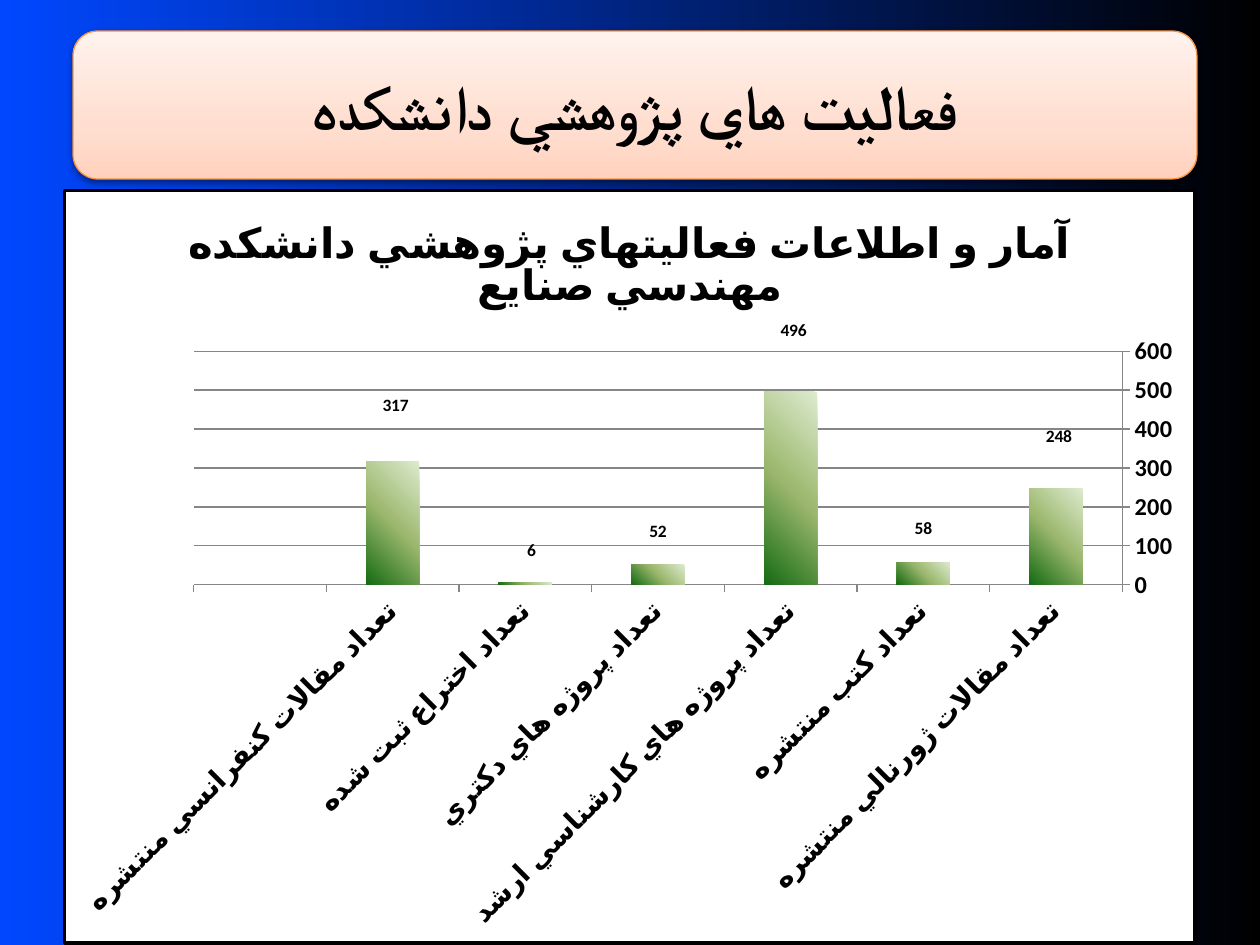
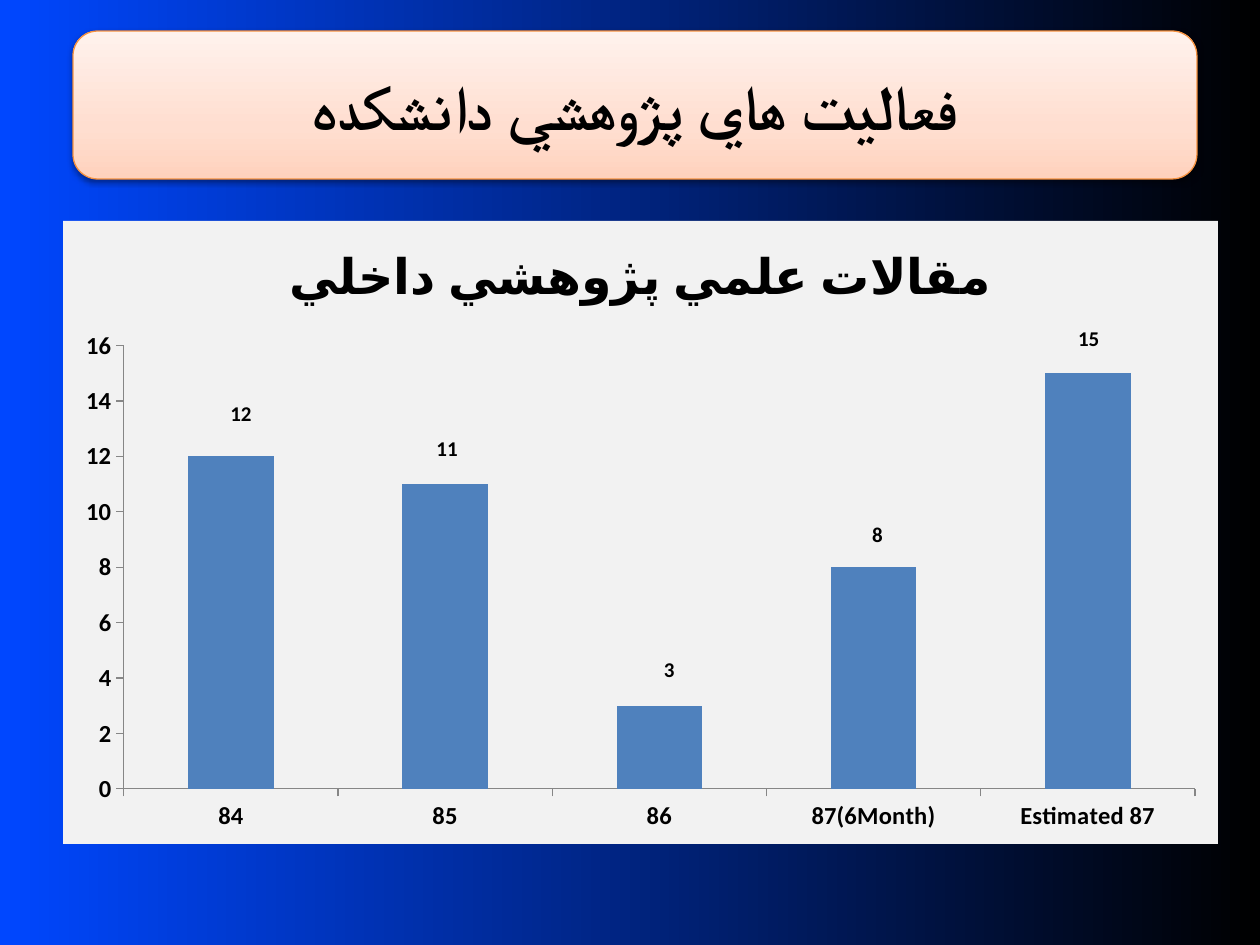
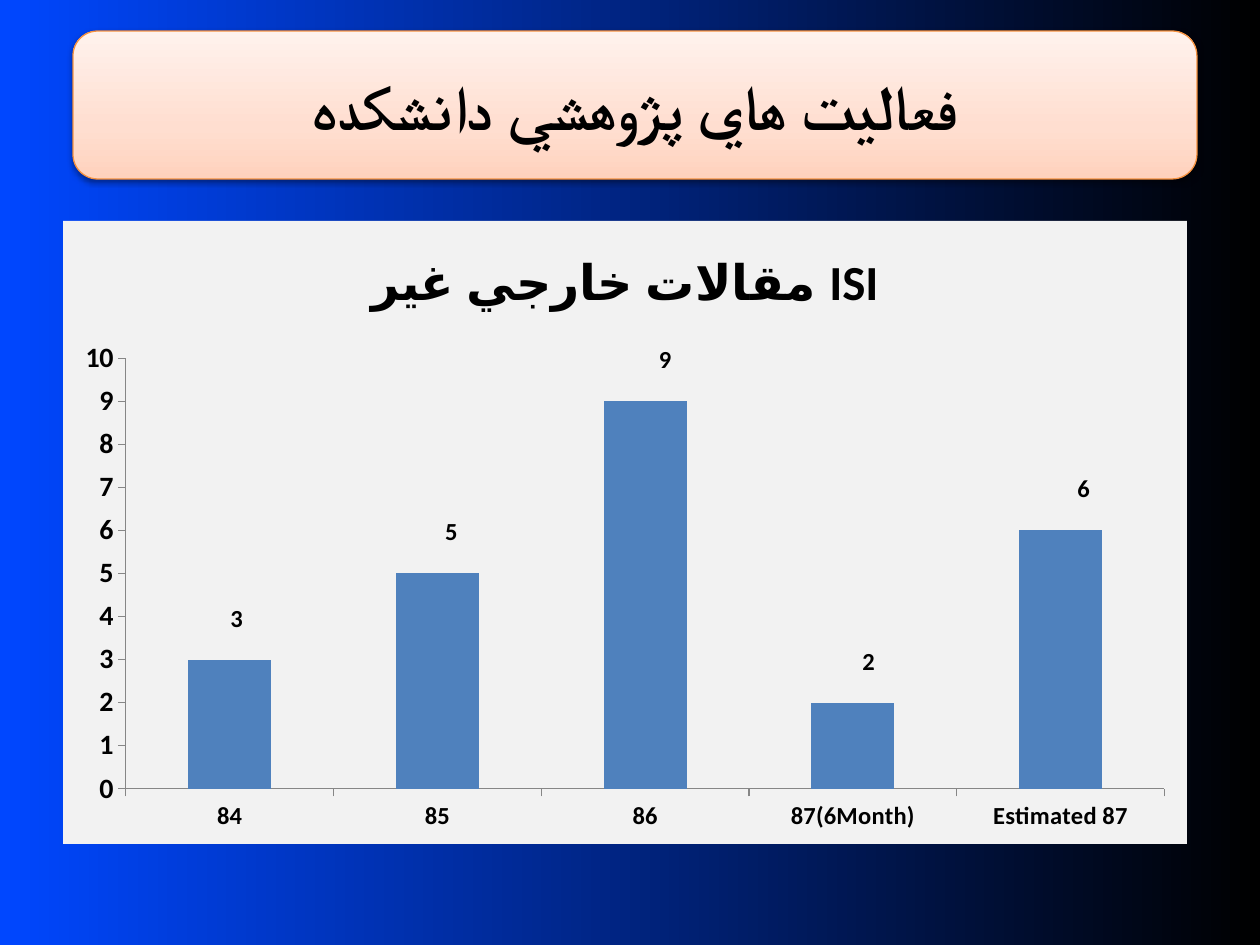
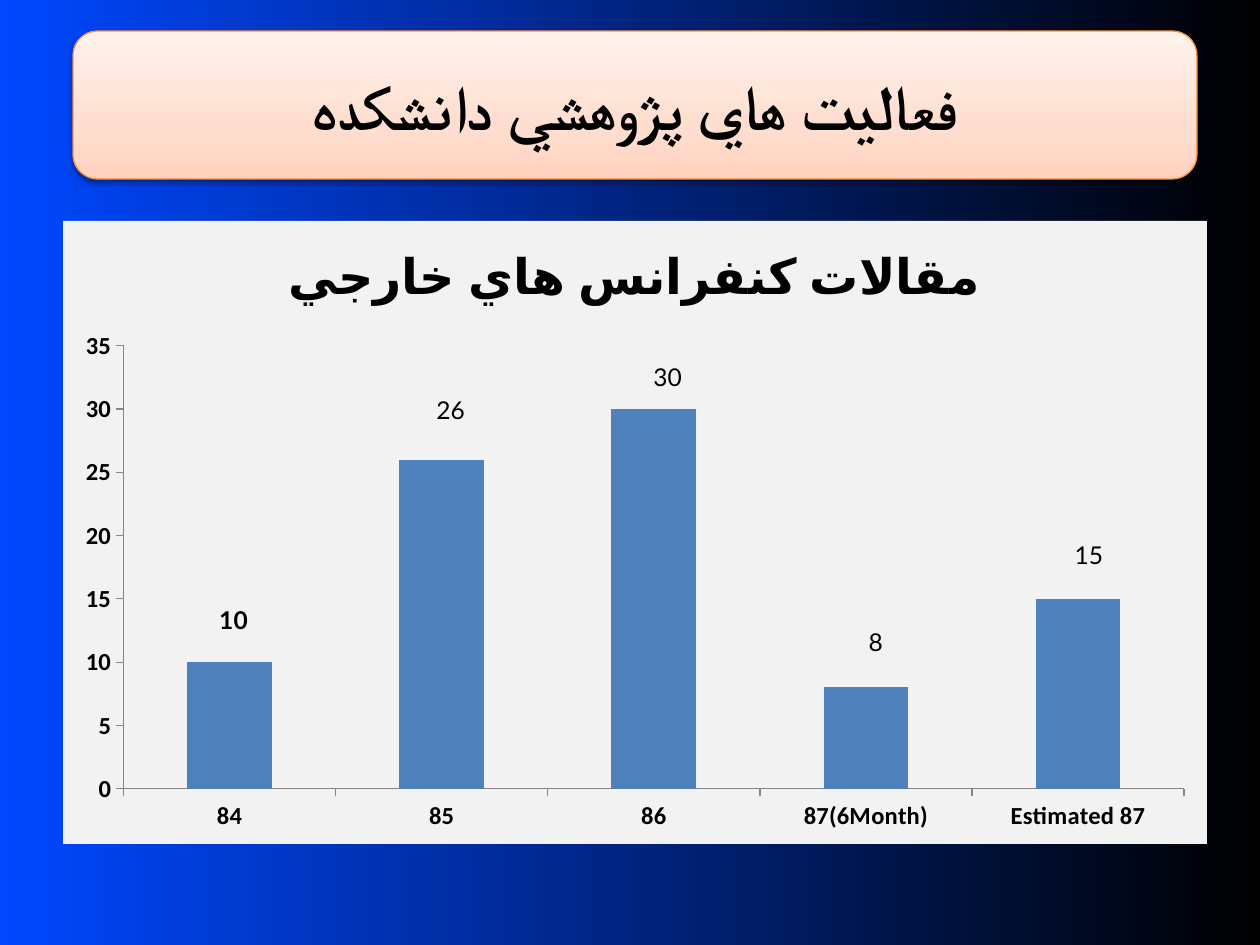
"""Build four slides of faculty research statistics, each a title band above a column chart."""
from lxml import etree
from pptx import Presentation
from pptx.chart.data import CategoryChartData
from pptx.dml.color import RGBColor
from pptx.enum.chart import XL_CHART_TYPE, XL_LABEL_POSITION, XL_TICK_MARK
from pptx.enum.shapes import MSO_SHAPE
from pptx.enum.text import MSO_ANCHOR, PP_ALIGN
from pptx.oxml import parse_xml
from pptx.oxml.ns import nsdecls, qn
from pptx.util import Pt

STACKED = XL_CHART_TYPE.COLUMN_STACKED
CLUSTERED = XL_CHART_TYPE.COLUMN_CLUSTERED
OUTSIDE_END = XL_LABEL_POSITION.OUTSIDE_END
OUTSIDE = XL_TICK_MARK.OUTSIDE
ROUNDED = MSO_SHAPE.ROUNDED_RECTANGLE
MIDDLE = MSO_ANCHOR.MIDDLE
CENTER = PP_ALIGN.CENTER

PX = 914400 / 126
SLIDE_SIZE = (1260, 945)
BAND_BOX = (73, 31, 1124, 148)
CHART_LEFT = 63
FONT = "Calibri"
LABEL_FONT = "Lato"
BLACK, WHITE, PALE = "000000", "FFFFFF", "F2F2F2"
BAND_LINE, AXIS_LINE, BAR_BLUE = "F69240", "868686", "4F81BD"
BACKDROP = ([(0, BLACK), (100, "0047FF")], 180)
BAND_FILL = ([(0, "FFD2BD"), (35, "FFDED0"), (100, "FFF2ED")], 270)
GREEN_BARS = ([(0, "DDEBCF"), (50, "9CB86E"), (100, "156B13")], 135)

BAND_TEXT = "فعاليت هاي پژوهشي دانشكده"
YEARS = ["84", "85", "86", "87(6Month)", "Estimated 87"]
YEARLY = {
    "type": CLUSTERED, "top": 221, "height": 623, "categories": YEARS,
    "title_size": 28, "title_font": FONT, "category_size": 14, "value_size": 14,
    "label_font": FONT, "bold_labels": YEARS, "overview": False,
}
OVERVIEW_CATEGORIES = [
    "تعداد مقالات ژورنالي منتشره",
    "تعداد كتب منتشره",
    "تعداد پروژه هاي كارشناسي ارشد",
    "تعداد پروژه هاي دكتري",
    "تعداد اختراع ثبت شده",
    "تعداد مقالات كنفرانسي منتشره",
]
CHARTS = [
    {
        "title": "آمار و اطلاعات فعاليتهاي پژوهشي دانشكده مهندسي صنايع",
        "type": STACKED, "top": 189, "width": 1134, "height": 756,
        "categories": OVERVIEW_CATEGORIES,
        "values": [248, 58, 496, 52, 6, 317, None],
        "label_shifts": [(3, -100), (0, -45), (3, -158), (0, -43), (6, -33), (3, -118)],
        "title_size": 24, "title_font": FONT, "category_size": 16, "value_size": 14,
        "label_size": 10, "label_font": FONT, "bold_labels": OVERVIEW_CATEGORIES,
        "overview": True,
    },
    YEARLY | {
        "title": "مقالات علمي پژوهشي داخلي", "width": 1155,
        "values": [12, 11, 3, 8, 15], "label_size": 12,
        "label_shifts": [(10, -25), (2, -18), (10, -18), (4, -15), (1, -17)],
    },
    YEARLY | {
        "title": "مقالات خارجي غير ISI", "width": 1124, "value_size": 16,
        "values": [3, 5, 9, 2, 6], "label_size": 14,
        "label_shifts": [(7, -21), (14, -21), (20, -21), (16, -21), (23, -21)],
    },
    YEARLY | {
        "title": "مقالات كنفرانس هاي خارجي", "width": 1144, "title_font": LABEL_FONT,
        "values": [10, 26, 30, 8, 15], "label_size": 14, "label_font": LABEL_FONT,
        "label_shifts": [(4, -23), (9, -30), (14, -12), (10, -26), (11, -24)],
        "bold_labels": YEARS[:1],
    },
]


def emu(*lengths):
    return [round(length * PX) for length in lengths]


def color(value):
    return RGBColor.from_string(value)


def set_font(font, size, name=FONT, bold=True):
    font.size, font.name, font.bold = Pt(size), name, bold
    font.color.rgb = color(BLACK)


def set_gradient(fill, owner, gradient):
    stops, angle = gradient
    fill.gradient()
    gradient_fill = owner.xpath(".//a:gradFill")[0]
    stop_list = gradient_fill.find(qn("a:gsLst"))
    stop_list.clear()
    for position, value in stops:
        stop = etree.SubElement(stop_list, qn("a:gs"), pos=str(position * 1000))
        etree.SubElement(stop, qn("a:srgbClr"), val=value)
    gradient_fill.find(qn("a:lin")).set("ang", str(angle * 60000))


def add_band(slide):
    band = slide.shapes.add_shape(ROUNDED, *emu(*BAND_BOX))
    set_gradient(band.fill, band.element, BAND_FILL)
    band.line.color.rgb = color(BAND_LINE)
    band.line.width = Pt(0.75)
    band.shadow.inherit = False
    band.element.spPr.find(qn("a:effectLst")).append(parse_xml(
        f'<a:outerShdw {nsdecls("a")} blurRad="{Pt(3.1)}" dist="{Pt(1.6)}" dir="5400000" rotWithShape="0">'
        f'<a:srgbClr val="{BLACK}"><a:alpha val="38000"/></a:srgbClr></a:outerShdw>'))
    band.text_frame.word_wrap = True
    band.text_frame.vertical_anchor = MIDDLE
    paragraph = band.text_frame.paragraphs[0]
    paragraph.alignment = CENTER
    run = paragraph.add_run()
    run.text = BAND_TEXT
    set_font(run.font, 36)
    latin_font = band.element.xpath(".//a:rPr/a:latin")[0]
    latin_font.addnext(parse_xml(f'<a:cs {nsdecls("a")} typeface="{FONT}"/>'))


def style_area(chart, overview):
    background = WHITE if overview else PALE
    outline = f'<a:solidFill><a:srgbClr val="{BLACK}"/></a:solidFill>' if overview else "<a:noFill/>"
    chart.element.find(qn("c:txPr")).addprevious(parse_xml(
        f'<c:spPr {nsdecls("c", "a")}><a:solidFill><a:srgbClr val="{background}"/></a:solidFill>'
        f'<a:ln w="{Pt(2)}">{outline}</a:ln></c:spPr>'))


def style_axes(chart, content):
    axes = ((chart.category_axis, content["category_size"]), (chart.value_axis, content["value_size"]))
    for axis, size in axes:
        axis.major_tick_mark = OUTSIDE
        axis.format.line.color.rgb = color(AXIS_LINE)
        set_font(axis.tick_labels.font, size)
    overview = content["overview"]
    chart.category_axis.reverse_order = overview
    chart.value_axis.has_major_gridlines = overview
    if overview:
        chart.value_axis.major_gridlines.format.line.color.rgb = color(AXIS_LINE)
        chart.element.xpath(".//c:catAx/c:txPr/a:bodyPr")[0].set("rot", "-2700000")


def hide_leader_lines(chart):
    labels = chart.element.xpath(".//c:ser/c:dLbls")[0]
    for leader_lines in labels.findall(qn("c:showLeaderLines")):
        labels.remove(leader_lines)
    labels.append(parse_xml(f'<c:showLeaderLines {nsdecls("c")} val="0"/>'))
    labels.append(parse_xml(
        f'<c:extLst {nsdecls("c")}><c:ext uri="{{CE6537A1-D6FC-4f65-9D91-7224C49458BB}}"'
        ' xmlns:c15="http://schemas.microsoft.com/office/drawing/2012/chart">'
        '<c15:showLeaderLines val="0"/></c:ext></c:extLst>'))


def add_labels(chart, series, content):
    labels = series.data_labels
    labels.show_value = True
    set_font(labels.font, content["label_size"], content["label_font"], len(content["bold_labels"]) > 1)
    for index, (category, (right, down)) in enumerate(zip(content["categories"], content["label_shifts"])):
        label = series.points[index].data_label
        set_font(label.font, content["label_size"], content["label_font"], category in content["bold_labels"])
        if not content["overview"]:
            label.position = OUTSIDE_END
        label_index = chart.element.xpath(f".//c:dLbl/c:idx[@val='{index}']")[0]
        label_index.addnext(parse_xml(
            f'<c:layout {nsdecls("c")}><c:manualLayout><c:x val="{right / content["width"]:.4f}"/>'
            f'<c:y val="{down / content["height"]:.4f}"/></c:manualLayout></c:layout>'))
    hide_leader_lines(chart)


def add_column_chart(slide, content):
    data = CategoryChartData()
    data.categories = content["categories"]
    data.add_series(content["title"], content["values"])
    box = emu(CHART_LEFT, content["top"], content["width"], content["height"])
    chart = slide.shapes.add_chart(content["type"], *box, data).chart
    set_font(chart.font, 10, bold=False)
    chart.has_legend = False
    style_area(chart, content["overview"])

    chart.has_title = True
    run = chart.chart_title.text_frame.paragraphs[0].add_run()
    run.text = content["title"]
    set_font(run.font, content["title_size"], content["title_font"])

    style_axes(chart, content)
    plot = chart.plots[0]
    plot.gap_width = 150
    plot.vary_by_categories = False
    series = plot.series[0]
    series.invert_if_negative = False
    if content["overview"]:
        plot.overlap = 100
        set_gradient(series.format.fill, chart.element, GREEN_BARS)
    else:
        series.format.fill.solid()
        series.format.fill.fore_color.rgb = color(BAR_BLUE)
    add_labels(chart, series, content)


def main():
    presentation = Presentation()
    presentation.slide_width, presentation.slide_height = emu(*SLIDE_SIZE)
    for content in CHARTS:
        slide = presentation.slides.add_slide(presentation.slide_layouts[6])
        set_gradient(slide.background.fill, slide.element, BACKDROP)
        add_band(slide)
        add_column_chart(slide, content)
    presentation.save("out.pptx")


if __name__ == "__main__":
    main()
